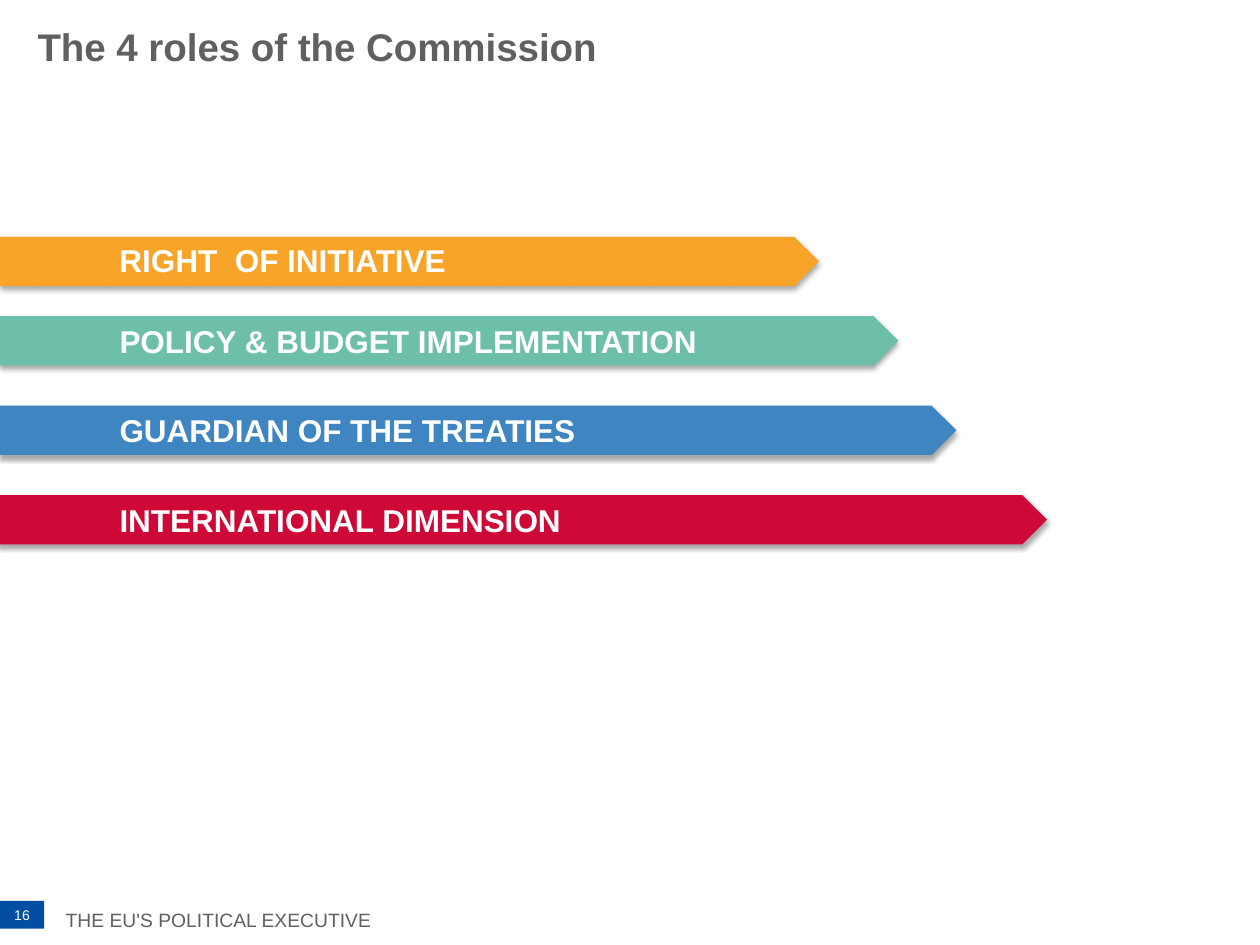
"""Build the slide on the four roles of the Commission."""
from lxml import etree
from pptx import Presentation
from pptx.dml.color import RGBColor
from pptx.enum import shapes, text
from pptx.oxml import ns
from pptx.util import Inches, Pt

TITLE = "The 4 roles of the Commission"
FOOTER = "THE EU'S POLITICAL EXECUTIVE"
PAGE = "16"
ROLES = [
    ("RIGHT  OF INITIATIVE", "F7A428", (0, 1.88, 6.5), (1.86, 4.14)),
    ("POLICY & BUDGET IMPLEMENTATION", "6DBFA9", (0, 2.51, 7.13), (2.51, 6.35)),
    ("GUARDIAN OF THE TREATIES", "3F85C1", (-0.01, 3.22, 7.6), (3.21, 4.42)),
    ("INTERNATIONAL DIMENSION", "CE0837", (-0.02, 3.93, 8.33), (3.93, 4.22)),
]
GREY, WHITE, BLUE = "606060", "FFFFFF", "034EA2"
BAR, LABEL, LEFT = 0.39, 0.4, 0.85


def paint(fmt, tone):
    fmt.rgb = RGBColor.from_string(tone)


def write(shape, words, size, tone, bold=False, align=text.PP_ALIGN.LEFT,
          anchor=text.MSO_ANCHOR.MIDDLE, wrap=True):
    frame = shape.text_frame
    frame.word_wrap = wrap
    frame.vertical_anchor = anchor
    para = frame.paragraphs[0]
    para.text = words
    para.alignment = align
    font = para.font
    font.name, font.size, font.bold = "Arial", Pt(size), bold
    paint(font.color, tone)
    return para


def add_box(slide, *place):
    return slide.shapes.add_textbox(*map(Inches, place))


def add_block(slide, kind, tone, *place):
    block = slide.shapes.add_shape(kind, *map(Inches, place))
    block.shadow.inherit = False
    block.fill.solid()
    paint(block.fill.fore_color, tone)
    block.line.fill.background()
    return block


def add_shade(block):
    effects = block._element.spPr.find(ns.qn("a:effectLst"))
    shade = etree.SubElement(effects, ns.qn("a:outerShdw"), blurRad=str(Pt(3.1)),
                             dist=str(Pt(1.8)), dir="5400000", rotWithShape="0")
    tone = etree.SubElement(shade, ns.qn("a:srgbClr"), val="000000")
    etree.SubElement(tone, ns.qn("a:alpha"), val="35000")


def main():
    deck = Presentation()
    deck.slide_width, deck.slide_height = Inches(10), Inches(7.5)
    slide = deck.slides.add_slide(deck.slide_layouts[6])
    center = text.PP_ALIGN.CENTER

    foot = write(add_box(slide, 0.41, 7.07, 2.65, 0.38), FOOTER, 11, GREY,
                 align=center, anchor=text.MSO_ANCHOR.TOP, wrap=False)
    foot.line_spacing = 1.5
    kinds = shapes.MSO_SHAPE
    badge = add_block(slide, kinds.RECTANGLE, BLUE, 0, 7.15, 0.35, 0.22)
    write(badge, PAGE, 8, WHITE, align=center)

    for words, tone, (left, top, width), (row, span) in ROLES:
        add_shade(add_block(slide, kinds.PENTAGON, tone, left, top, width, BAR))
        write(add_box(slide, LEFT, row, span, LABEL), words, 18, WHITE, bold=True)

    write(add_box(slide, 0.2, 0.13, 9, 0.47), TITLE, 22, GREY, bold=True)
    deck.save("out.pptx")


if __name__ == "__main__":
    main()
